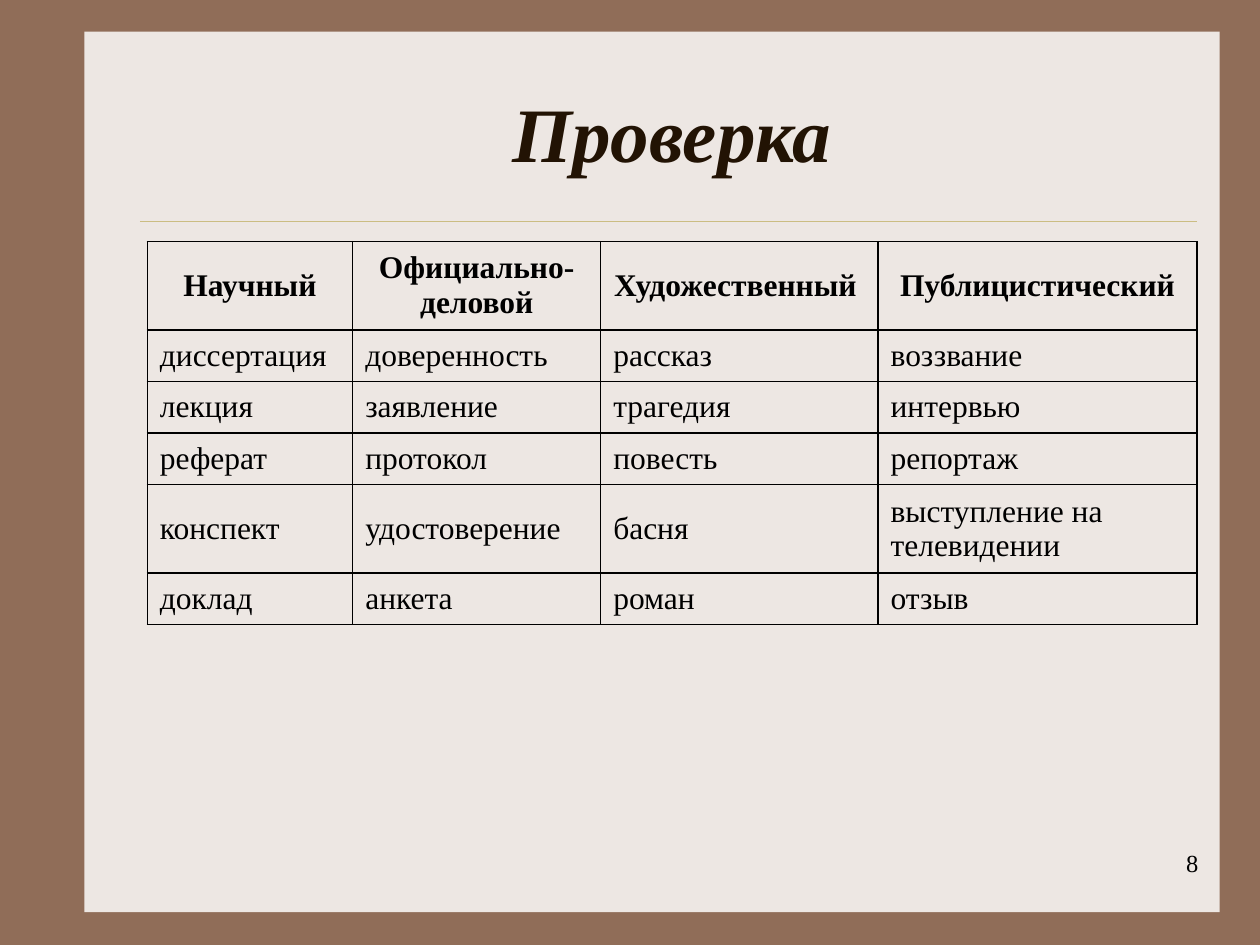
from lxml import etree
from pptx import Presentation
from pptx.dml.color import RGBColor
from pptx.enum.shapes import MSO_CONNECTOR, MSO_SHAPE
from pptx.enum.text import MSO_ANCHOR, PP_ALIGN
from pptx.oxml.ns import qn
from pptx.util import Cm, Pt

LEFT, MID, RIGHT = PP_ALIGN.LEFT, PP_ALIGN.CENTER, PP_ALIGN.RIGHT
MIDDLE = MSO_ANCHOR.MIDDLE
RECT, STRAIGHT = MSO_SHAPE.RECTANGLE, MSO_CONNECTOR.STRAIGHT
FONT = "Times New Roman"
HUES = {"frame": "906D58", "paper": "EDE7E3", "rule": "CBBD83",
        "title": "221304", "ink": "000000"}
COLS = [4.14, 5, 5.59, 6.43]
ROWS = [1.78, 1.04, 1.04, 1.04, 1.78, 1.04]
STYLES = [
    ["Научный", "Официально-деловой", "Художественный ", "Публицистический"],
    ["диссертация", "доверенность", "рассказ", "воззвание"],
    ["лекция", "заявление", "трагедия", "интервью"],
    ["реферат", "протокол", "повесть", "репортаж"],
    ["конспект", "удостоверение", "басня", "выступление на телевидении"],
    ["доклад", "анкета", "роман", "отзыв"],
]


def hue(name):
    return RGBColor.from_string(HUES[name])


def write(frame, text, size, align, color="ink", bold=False, slant=False):
    para = frame.paragraphs[0]
    para.alignment = align
    run = para.add_run()
    run.text = text
    font = run.font
    font.name, font.size = FONT, Pt(size)
    font.bold, font.italic = bold, slant
    font.color.rgb = hue(color)


def edge(cell):
    """Draw a thin line on all four sides of a cell."""
    props = cell._tc.get_or_add_tcPr()
    for side in ("lnL", "lnR", "lnT", "lnB"):
        line = etree.SubElement(props, qn("a:" + side), w=str(Pt(1)))
        fill = etree.SubElement(line, qn("a:solidFill"))
        etree.SubElement(fill, qn("a:srgbClr"), val=HUES["ink"])


def add_paper(slide, x, y, w, h):
    back = slide.background.fill
    back.solid()
    back.fore_color.rgb = hue("frame")
    paper = slide.shapes.add_shape(RECT, Cm(x), Cm(y), Cm(w), Cm(h))
    paper.shadow.inherit = False
    paper.fill.solid()
    paper.fill.fore_color.rgb = hue("paper")
    paper.line.fill.background()
    # Rule under the title
    top = Cm(y + 3.81)
    rule = slide.shapes.add_connector(
        STRAIGHT, Cm(x + 1.12), top, Cm(x + w - 0.46), top)
    rule.line.color.rgb = hue("rule")
    rule.line.width = Pt(0.25)
    etree.SubElement(rule._element.spPr, qn("a:effectLst"))


def add_title(slide, x, y, w, h):
    title = slide.shapes.title
    title.left, title.top, title.width, title.height = map(Cm, (x, y, w, h))
    title.text_frame.vertical_anchor = MIDDLE
    write(title.text_frame, "Проверка", 44, MID, "title", True, True)
    # Bring the title in front of the paper
    slide.shapes._spTree.append(title._element)


def add_grid(slide, x, y):
    table = slide.shapes.add_table(
        len(ROWS), len(COLS), Cm(x), Cm(y),
        Cm(sum(COLS)), Cm(sum(ROWS))).table
    table.first_row = table.horz_banding = False
    for col, wide in zip(table.columns, COLS):
        col.width = Cm(wide)
    for i, (row, high) in enumerate(zip(table.rows, ROWS)):
        row.height = Cm(high)
        head = i == 0
        for cell, text in zip(row.cells, STYLES[i]):
            edge(cell)
            cell.fill.background()
            cell.vertical_anchor = MIDDLE
            write(cell.text_frame, text, 18, MID if head else LEFT, bold=head)


def add_number(slide, x, y, w, h):
    box = slide.shapes.add_textbox(Cm(x), Cm(y), Cm(w), Cm(h))
    box.text_frame.word_wrap = True
    write(box.text_frame, "8", 14, RIGHT)


def main():
    deck = Presentation()
    deck.slide_width, deck.slide_height = Cm(25.4), Cm(19.05)
    slide = deck.slides.add_slide(deck.slide_layouts[5])
    add_paper(slide, 1.7, 0.64, 22.89, 17.75)
    add_title(slide, 2.97, 1.07, 21.16, 3.18)
    add_grid(slide, 2.97, 4.87)
    add_number(slide, 19.13, 16.97, 5.28, 1.27)
    deck.save("out.pptx")


if __name__ == "__main__":
    main()
